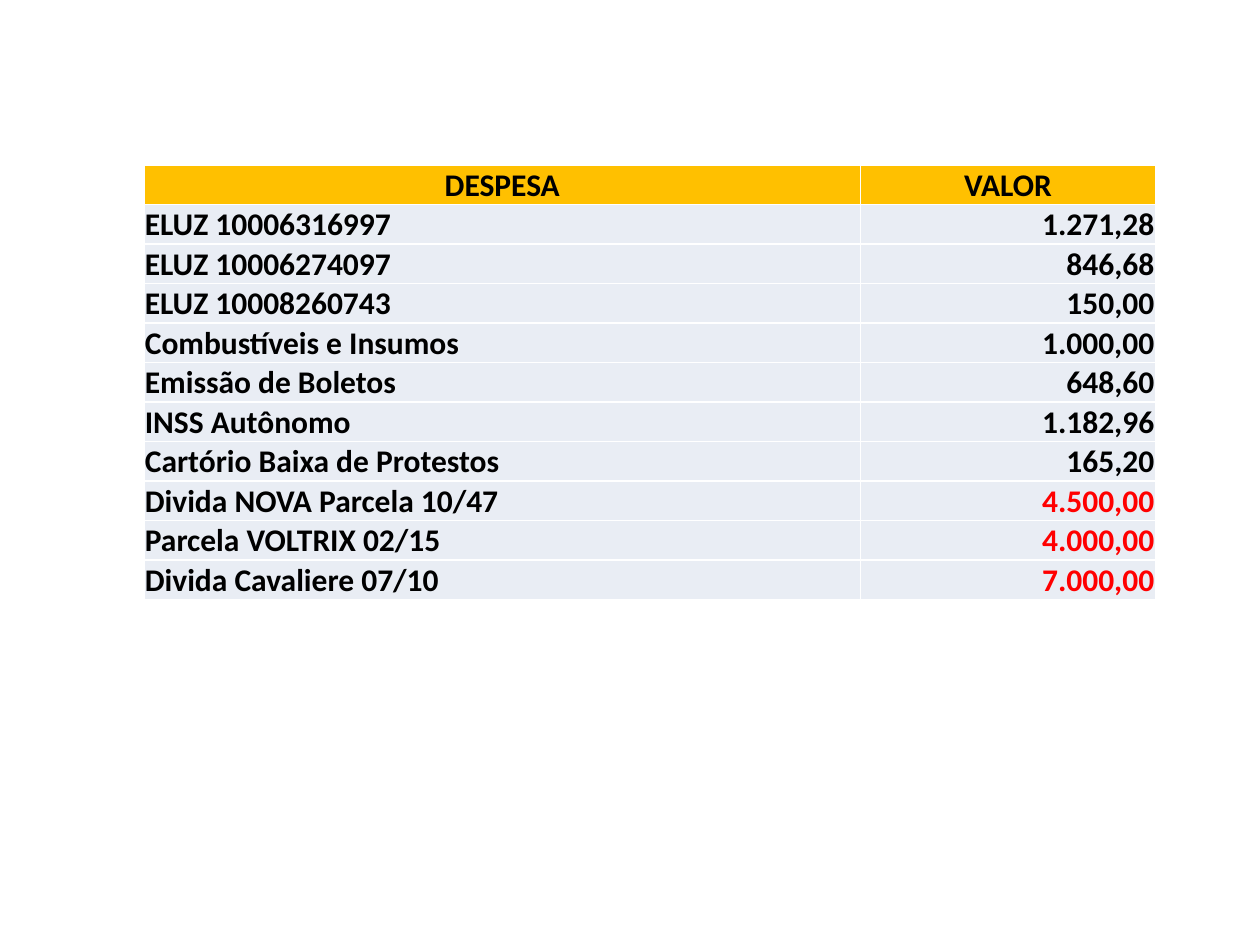
from dataclasses import dataclass

from lxml.etree import SubElement
from pptx import Presentation
from pptx.dml.color import RGBColor as Color
from pptx.enum.text import MSO_ANCHOR as Anchor, PP_ALIGN as Align
from pptx.oxml.ns import qn
from pptx.util import Cm, Pt


@dataclass(frozen=True)
class Theme:
    font: str = "Calibri"
    text_size: int = 18
    text: str = "000000"
    debt: str = "FF0000"
    header_fill: str = "FFC000"
    body_fill: str = "E9EDF4"
    border: str = "FFFFFF"
    border_width: int = 1


HEADERS = ("DESPESA", "VALOR")
EXPENSES = (
    ("ELUZ 10006316997", "1.271,28"),
    ("ELUZ 10006274097", "846,68"),
    ("ELUZ 10008260743", "150,00"),
    ("Combustíveis e Insumos", "1.000,00"),
    ("Emissão de Boletos", "648,60"),
    ("INSS Autônomo", "1.182,96"),
    ("Cartório Baixa de Protestos", "165,20"),
)
DEBTS = (
    ("Divida NOVA Parcela 10/47", "4.500,00"),
    ("Parcela VOLTRIX 02/15", "4.000,00"),
    ("Divida Cavaliere 07/10", "7.000,00"),
)


def write_text(text_frame, text, *, font, size, color, bold=True, align=Align.LEFT):
    paragraph = text_frame.paragraphs[0]
    paragraph.alignment = align
    run = paragraph.add_run()
    run.text = text
    run.font.name = font
    run.font.size = Pt(size)
    run.font.bold = bold
    run.font.color.rgb = Color.from_string(color)


class SlideBuilder:
    def __init__(self, slide, theme):
        self.slide = slide
        self.theme = theme

    def add_borders(self, cell):
        properties = cell._tc.get_or_add_tcPr()
        for side in ("a:lnL", "a:lnR", "a:lnT", "a:lnB"):
            line = SubElement(properties, qn(side), w=str(Pt(self.theme.border_width)))
            fill = SubElement(line, qn("a:solidFill"))
            SubElement(fill, qn("a:srgbClr"), val=self.theme.border)

    def fill_cell(self, cell, text, *, fill, color, align, anchor):
        self.add_borders(cell)
        cell.fill.solid()
        cell.fill.fore_color.rgb = Color.from_string(fill)
        cell.margin_left = cell.margin_right = cell.margin_top = Cm(0.02)
        cell.margin_bottom = 0
        cell.vertical_anchor = anchor
        write_text(cell.text_frame, text, font=self.theme.font,
                   size=self.theme.text_size, color=color, align=align)

    def add_expense_table(self, left, top, column_widths, row_height):
        theme = self.theme
        rows = (HEADERS, *EXPENSES, *DEBTS)
        frame = self.slide.shapes.add_table(
            len(rows), len(HEADERS), left, top,
            sum(column_widths), row_height * len(rows))
        table = frame.table
        for column, width in zip(table.columns, column_widths):
            column.width = width
        for row, values in zip(table.rows, rows):
            row.height = row_height
            is_header = values is HEADERS
            value_color = theme.debt if values in DEBTS else theme.text
            formats = ((theme.text, Align.LEFT), (value_color, Align.RIGHT))
            for cell, text, (color, align) in zip(row.cells, values, formats):
                self.fill_cell(
                    cell, text, color=color,
                    fill=theme.header_fill if is_header else theme.body_fill,
                    align=Align.CENTER if is_header else align,
                    anchor=Anchor.MIDDLE if is_header else Anchor.BOTTOM)


def main():
    presentation = Presentation()
    presentation.slide_width = Cm(25.4)
    presentation.slide_height = Cm(19.05)
    slide = presentation.slides.add_slide(presentation.slide_layouts[6])
    builder = SlideBuilder(slide, Theme())
    builder.add_expense_table(Cm(2.9), Cm(3.33), (Cm(14.45), Cm(5.94)), Cm(0.79))
    presentation.save("out.pptx")


if __name__ == "__main__":
    main()
